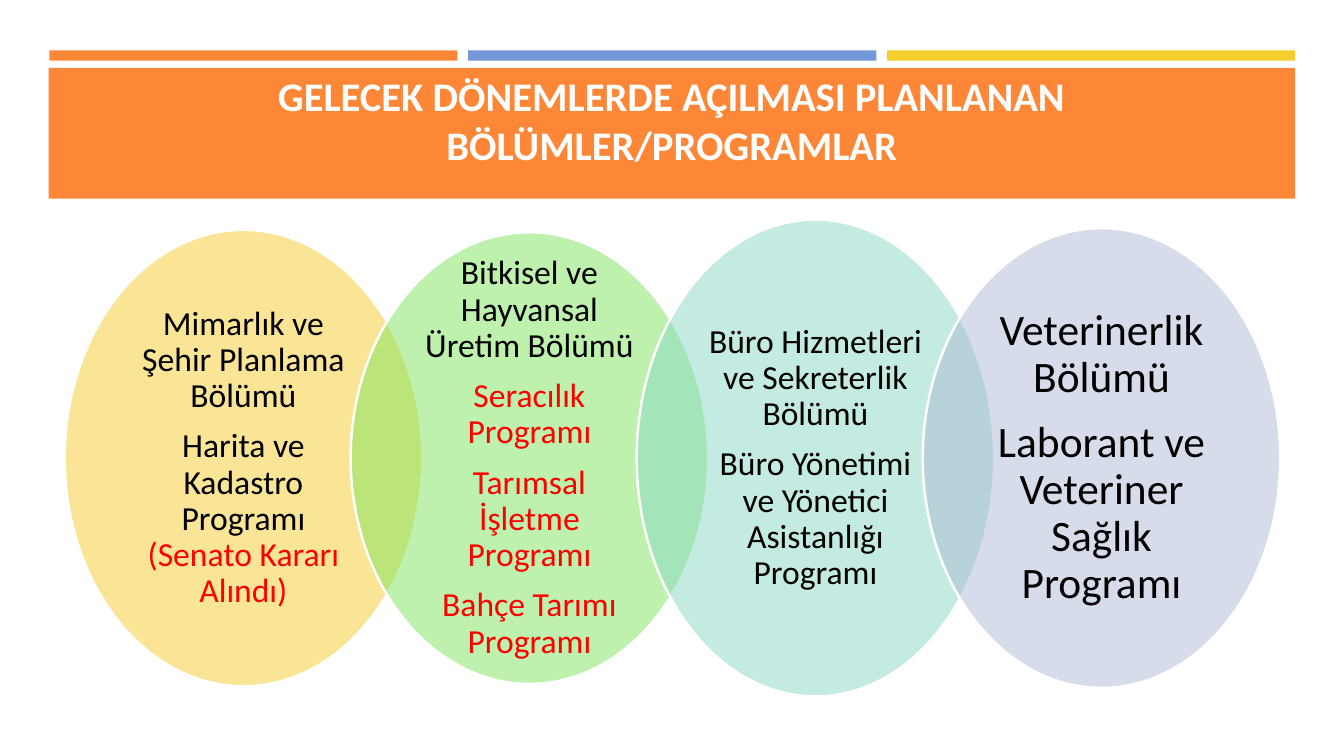
"""Build a slide of four overlapping ovals listing planned departments and programmes."""
import pptx
import pptx.dml.color
import pptx.enum.shapes
import pptx.enum.text
import pptx.oxml
import pptx.oxml.ns
import pptx.util
from lxml import etree

Pt = pptx.util.Pt
RGBColor = pptx.dml.color.RGBColor
SHAPES = pptx.enum.shapes.MSO_SHAPE
ANCHOR = pptx.enum.text.MSO_ANCHOR
CENTER = pptx.enum.text.PP_ALIGN.CENTER

ORANGE = RGBColor(0xFE, 0x86, 0x37)
BLUE = RGBColor(0x75, 0x98, 0xD9)
YELLOW = RGBColor(0xF5, 0xCD, 0x2D)
GREEN = RGBColor(0x7E, 0xE4, 0x5E)
TEAL = RGBColor(0x89, 0xD9, 0xC4)
LAVENDER = RGBColor(0xAE, 0xBA, 0xD5)
WHITE = RGBColor(0xFF, 0xFF, 0xFF)
BLACK = RGBColor(0, 0, 0)
RED = RGBColor(0xFF, 0, 0)

FONT = "Calibri"
TITLE = "GELECEK DÖNEMLERDE AÇILMASI PLANLANAN BÖLÜMLER/PROGRAMLAR"
BARS = [ORANGE, BLUE, YELLOW]
DEPARTMENTS = [
    (YELLOW, 326, 24, 10, [
        [("Mimarlık ve Şehir Planlama Bölümü", BLACK)],
        [("Harita ve Kadastro Programı ", BLACK), ("(Senato Kararı Alındı)", RED)],
    ]),
    (GREEN, 322.6, 24, 10, [
        [("Bitkisel ve Hayvansal Üretim Bölümü", BLACK)],
        [("Seracılık Programı", RED)],
        [("Tarımsal İşletme Programı", RED)],
        [("Bahçe Tarımı Programı", RED)],
    ]),
    (TEAL, 340.6, 24, 10, [
        [("Büro Hizmetleri ve Sekreterlik Bölümü", BLACK)],
        [("Büro Yönetimi ve Yönetici Asistanlığı Programı", BLACK)],
    ]),
    (LAVENDER, 328.4, 31, 13, [
        [("Veterinerlik Bölümü", BLACK)],
        [("Laborant ve Veteriner Sağlık Programı", BLACK)],
    ]),
]

BAR_LEFT, BAR_TOP, BAR_WIDTH, BAR_HEIGHT, BAR_STEP = 35.2, 36, 291.6, 7.4, 299.2
OVAL_LEFT, OVAL_MIDDLE, OVAL_WIDTH, OVAL_STEP = 46.2, 327.2, 255.4, 204.3
OVAL_INSET = 13.6


def add_filled(page, kind, left, top, width, height, color):
    shape = page.shapes.add_shape(kind, Pt(left), Pt(top), Pt(width), Pt(height))
    shape.shadow.inherit = False
    shape.fill.solid()
    shape.fill.fore_color.rgb = color
    shape.line.fill.background()
    return shape


def add_header(page):
    for index, color in enumerate(BARS):
        add_filled(page, SHAPES.RECTANGLE, BAR_LEFT + index * BAR_STEP, BAR_TOP,
                   BAR_WIDTH, BAR_HEIGHT, color)
    banner = add_filled(page, SHAPES.RECTANGLE, 34.7, 48.5, 890.4, 93.5, ORANGE)
    title = page.shapes.title
    banner.element.addnext(title.element)
    title.left, title.top, title.width, title.height = Pt(46), Pt(44), Pt(868), Pt(80)
    frame = title.text_frame
    frame.text = TITLE
    frame.word_wrap = True
    frame.auto_size = pptx.enum.text.MSO_AUTO_SIZE.NONE
    frame.vertical_anchor = ANCHOR.BOTTOM
    para = frame.paragraphs[0]
    para.alignment = CENTER
    para.font.name, para.font.size, para.font.bold = FONT, Pt(29), True
    para.font.color.rgb = WHITE


def add_department(page, index, color, height, size, gap, paragraphs):
    oval = add_filled(page, SHAPES.OVAL, OVAL_LEFT + index * OVAL_STEP,
                      OVAL_MIDDLE - height / 2, OVAL_WIDTH, height, color)
    fill_color = oval.element.spPr.find(".//" + pptx.oxml.ns.qn("a:srgbClr"))
    etree.SubElement(fill_color, pptx.oxml.ns.qn("a:alpha"), val="50000")
    oval.line.color.rgb = WHITE
    oval.line.width = Pt(1.75)
    frame = oval.text_frame
    frame.word_wrap = True
    frame.vertical_anchor = ANCHOR.MIDDLE
    frame.margin_left = frame.margin_right = Pt(OVAL_INSET)
    frame.margin_top = frame.margin_bottom = 0
    for number, spans in enumerate(paragraphs):
        para = frame.add_paragraph() if number else frame.paragraphs[0]
        para.alignment = CENTER
        para.line_spacing = 0.9
        para.space_after = Pt(gap)
        para.font.name, para.font.size = FONT, Pt(size)
        for text, text_color in spans:
            span = para.add_run()
            span.text = text
            span.font.color.rgb = text_color


def main():
    deck = pptx.Presentation()
    deck.slide_width, deck.slide_height = Pt(960), Pt(540)
    page = deck.slides.add_slide(deck.slide_layouts[5])
    add_header(page)
    for index, department in enumerate(DEPARTMENTS):
        add_department(page, index, *department)
    deck.save("out.pptx")


if __name__ == "__main__":
    main()
